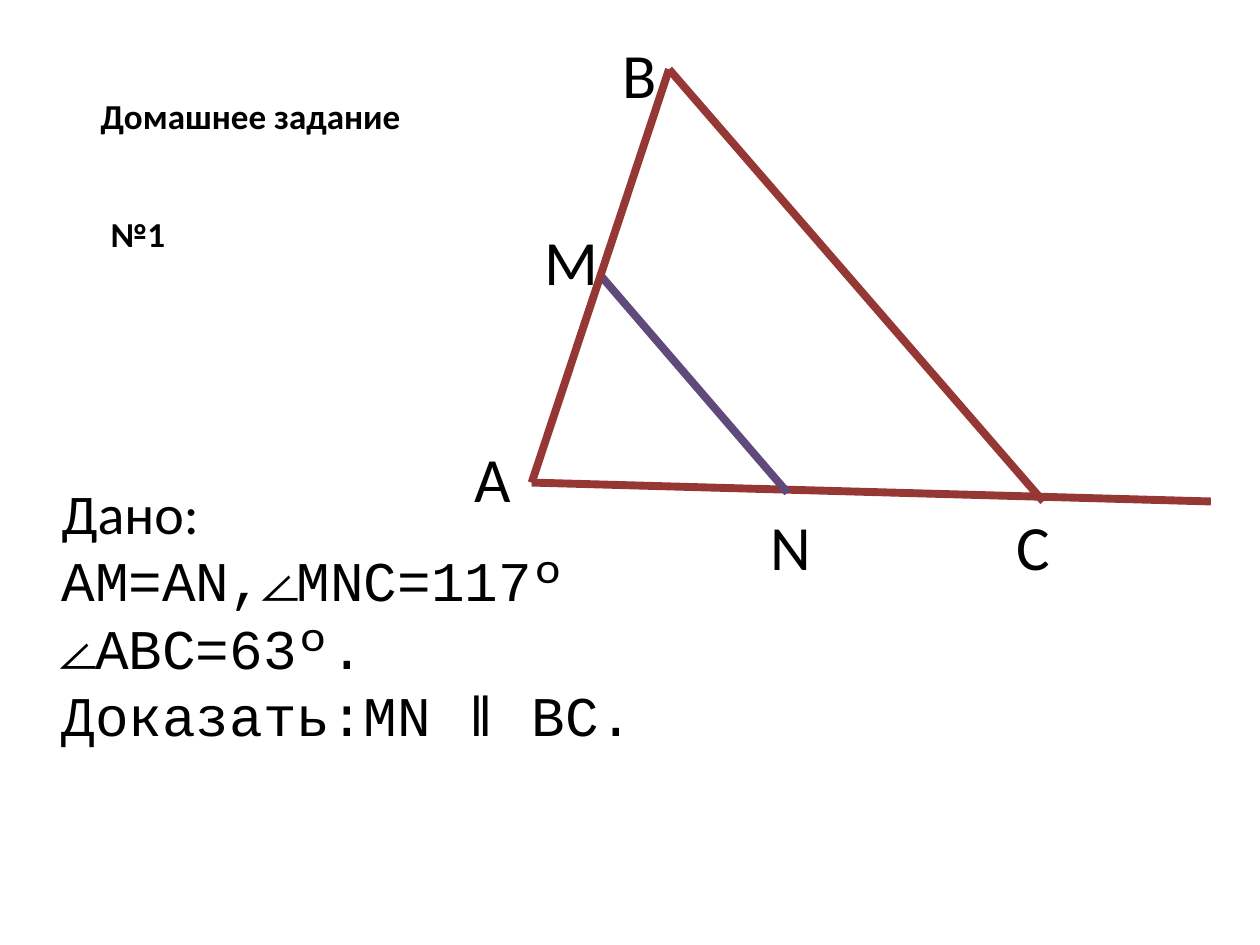
from lxml import etree
from pptx import Presentation
from pptx.dml.color import RGBColor
from pptx.enum.shapes import MSO_CONNECTOR
from pptx.enum.text import MSO_AUTO_SIZE
from pptx.oxml.ns import qn
from pptx.util import Pt

PX = 9144  # 100 px to the inch
STRAIGHT = MSO_CONNECTOR.STRAIGHT
GROW = MSO_AUTO_SIZE.SHAPE_TO_FIT_TEXT
COLORS = {"text": "000000", "side": "953735", "segment": "604A7B"}
SANS, MONO = "Calibri", "Courier New"


def add_text(s, box, lines, size, bold=False):
    """Add a text box; lines are (text, font) pairs, one paragraph each."""
    tf = s.shapes.add_textbox(*(v * PX for v in box)).text_frame
    tf.word_wrap = False
    tf.auto_size = GROW
    for i, (text, font) in enumerate(lines):
        p = tf.paragraphs[0] if i == 0 else tf.add_paragraph()
        r = p.add_run()
        r.text = text
        r.font.name = font
        r.font.size = Pt(size)
        r.font.bold = bold
        r.font.color.rgb = RGBColor.from_string(COLORS["text"])


def add_line(s, start, end, color):
    line = s.shapes.add_connector(STRAIGHT, *(v * PX for v in start + end))
    line.line.color.rgb = RGBColor.from_string(COLORS[color])
    line.line.width = Pt(4.5)
    etree.SubElement(line._element.spPr, qn("a:effectLst"))


def add_heading(s, x, y):
    add_text(s, (x, y, 333, 44), [("Домашнее задание", SANS)], 20, True)
    add_text(s, (x + 8, y + 94, 76, 44), [("№1", SANS)], 20, True)


def add_triangle(s, x, y):
    points = {
        "A": (55, 360), "B": (164, 32), "C": (461, 375),
        "M": (110, 196), "N": (258, 368), "ray end": (594, 375),
    }
    points = {name: (x + dx, y + dy) for name, (dx, dy) in points.items()}

    # Segment MN lies over the ray and under the sides
    for start, end, color in [
        ("A", "ray end", "side"), ("N", "M", "segment"),
        ("A", "B", "side"), ("B", "C", "side"),
    ]:
        add_line(s, points[start], points[end], color)

    # Vertex labels
    for name, dx, dy, w in [
        ("A", 0, 321, 55), ("B", 117, 0, 55), ("C", 430, 375, 55),
        ("M", 55, 149, 63), ("N", 235, 375, 58),
    ]:
        add_text(s, (x + dx, y + dy, w, 71), [(name, SANS)], 36)


def add_problem(s, x, y):
    add_text(s, (x, y, 483, 226), [
        ("Дано:", SANS),
        ("AM=AN,∠MNC=117º", MONO),
        ("∠ABC=63º.", MONO),
        ("Доказать:MN ǁ BC.", MONO),
    ], 32)


def main():
    prs = Presentation()
    prs.slide_width, prs.slide_height = 1000 * PX, 750 * PX
    s = prs.slides.add_slide(prs.slide_layouts[6])
    add_heading(s, 70, 70)
    add_triangle(s, 367, 23)
    add_problem(s, 39, 375)
    prs.save("out.pptx")


if __name__ == "__main__":
    main()
